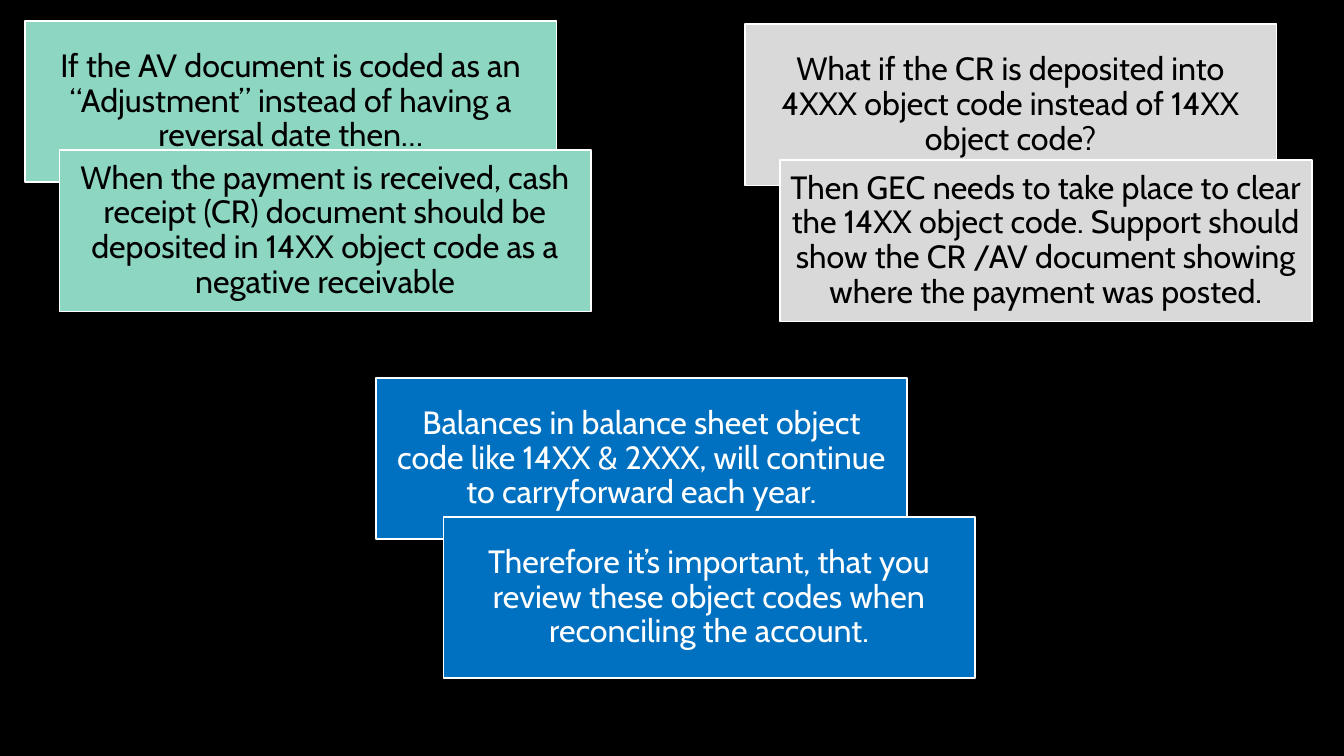
"""Build a slide of three overlapping pairs of text cards on black."""
import pptx
import pptx.dml.color
import pptx.enum.shapes
import pptx.enum.text
import pptx.util

Inches = pptx.util.Inches
Pt = pptx.util.Pt
RGBColor = pptx.dml.color.RGBColor

BLACK = RGBColor(0x00, 0x00, 0x00)
WHITE = RGBColor(0xFF, 0xFF, 0xFF)
MINT = RGBColor(0x8D, 0xD6, 0xC1)
GREY = RGBColor(0xD9, 0xD9, 0xD9)
BLUE = RGBColor(0x00, 0x70, 0xC0)

CARDS = [
    (0.25, 0.21, MINT, BLACK,
     "If the AV document is coded as an “Adjustment” instead of having a "
     "reversal date then…"),
    (0.59, 1.49, MINT, BLACK,
     "When the payment is received, cash receipt (CR) document should be "
     "deposited in 14XX object code as a negative receivable"),
    (7.39, 0.24, GREY, BLACK,
     "What if the CR is deposited into 4XXX object code instead of 14XX "
     "object code?"),
    (7.74, 1.59, GREY, BLACK,
     "Then GEC needs to take place to clear the 14XX object code. Support "
     "should show the CR /AV document showing where the payment was posted."),
    (3.73, 3.75, BLUE, WHITE,
     "Balances in balance sheet object code like 14XX & 2XXX, will continue "
     "to carryforward each year."),
    (4.4, 5.13, BLUE, WHITE,
     "Therefore it’s important, that you review these object codes when "
     "reconciling the account."),
]


class Board:
    font = "Cabin"
    size = Pt(23)
    width = Inches(5.27)
    height = Inches(1.6)
    inset = Inches(0.1)

    def __init__(self, slide):
        self.slide = slide

    def ground(self, color):
        fill = self.slide.background.fill
        fill.solid()
        fill.fore_color.rgb = color

    def card(self, left, top, color, ink, text):
        box = self.slide.shapes.add_shape(
            pptx.enum.shapes.MSO_SHAPE.RECTANGLE,
            Inches(left), Inches(top), self.width, self.height)
        box.shadow.inherit = False
        box.fill.solid()
        box.fill.fore_color.rgb = color
        box.line.color.rgb = WHITE
        box.line.width = Pt(1.25)
        self.label(box.text_frame, text, ink)

    def label(self, frame, text, ink):
        frame.word_wrap = True
        frame.vertical_anchor = pptx.enum.text.MSO_ANCHOR.MIDDLE
        frame.margin_left = frame.margin_right = self.inset
        frame.margin_top = frame.margin_bottom = self.inset
        para = frame.paragraphs[0]
        para.alignment = pptx.enum.text.PP_ALIGN.CENTER
        para.line_spacing = 0.9
        run = para.add_run()
        run.text = text
        run.font.name = self.font
        run.font.size = self.size
        run.font.color.rgb = ink


def main():
    deck = pptx.Presentation()
    deck.slide_width = Inches(13.33)
    deck.slide_height = Inches(7.5)
    board = Board(deck.slides.add_slide(deck.slide_layouts[6]))
    board.ground(BLACK)
    for card in CARDS:
        board.card(*card)
    deck.save("out.pptx")


if __name__ == "__main__":
    main()
